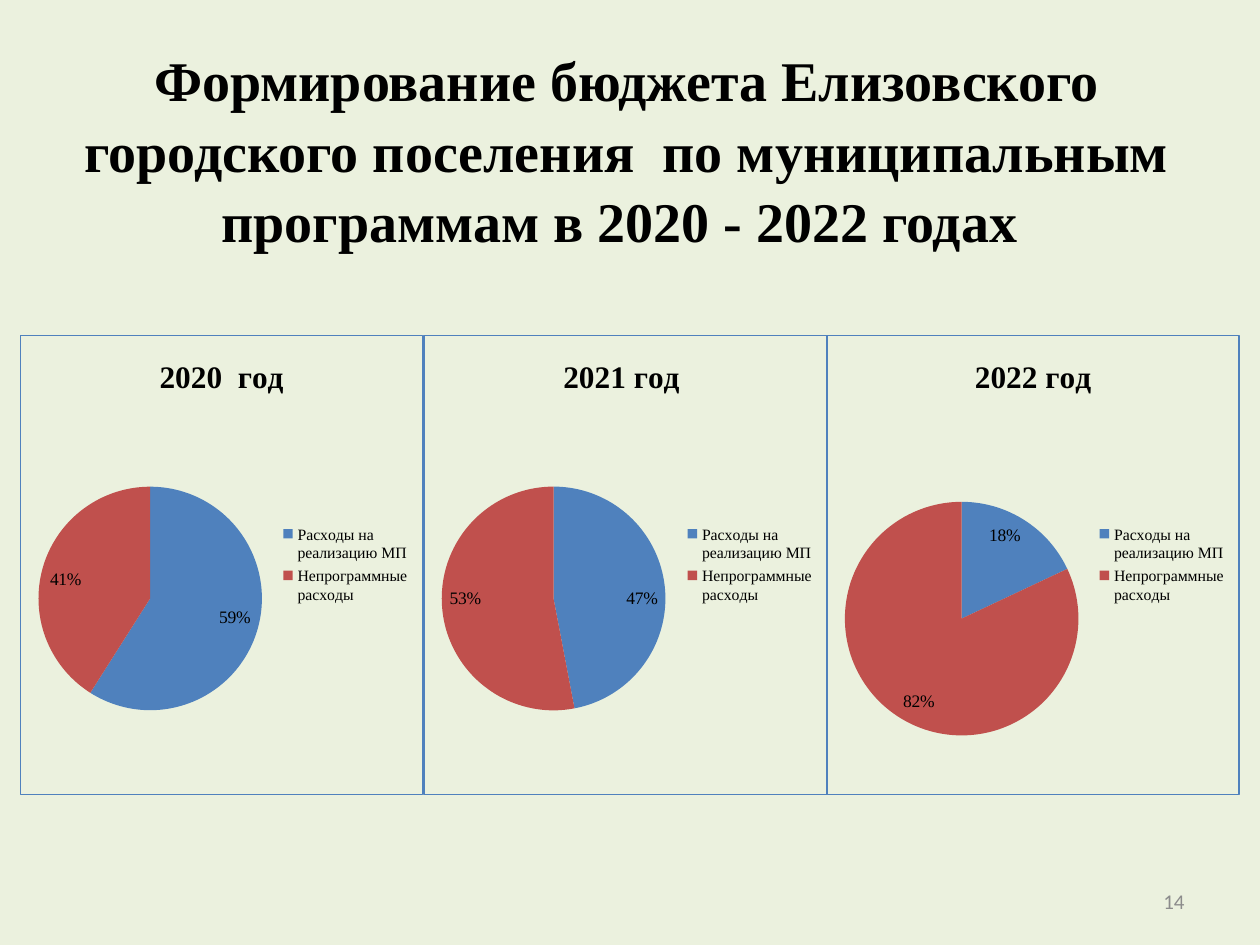
from lxml import etree
from pptx import Presentation
from pptx.chart.data import CategoryChartData
from pptx.dml.color import RGBColor
from pptx.enum.chart import XL_CHART_TYPE, XL_LABEL_POSITION, XL_LEGEND_POSITION
from pptx.enum.text import MSO_ANCHOR, PP_ALIGN
from pptx.oxml import parse_xml
from pptx.oxml.ns import nsdecls, qn
from pptx.util import Inches, Pt

BACKGROUND = RGBColor(0xEB, 0xF1, 0xDE)
BLACK = RGBColor(0, 0, 0)
GREY = RGBColor(0x8C, 0x8C, 0x8C)
BLUE = RGBColor(0x4F, 0x81, 0xBD)
RED = RGBColor(0xC0, 0x50, 0x4D)
SERIF = "Times New Roman"

CATEGORIES = ["Расходы на реализацию МП", "Непрограммные расходы"]
CHART_TOP, CHART_HEIGHT = 2.66, 3.65
# title, percentages, left, width, pie top within chart, pie diameter
YEARS = [
    ("2020  год", (59, 41), 0.16, 3.2, 1.2, 1.78),
    ("2021 год ", (47, 53), 3.36, 3.21, 1.2, 1.78),
    ("2022 год", (18, 82), 6.56, 3.28, 1.32, 1.86),
]
PIE_LEFT = 0.14


def style_font(font, size, color=BLACK, name=SERIF, bold=False):
    font.size, font.name, font.bold = Pt(size), name, bold
    font.color.rgb = color


def add_text(s, text, box, align, size, spacing=1.0, **style):
    tf = s.shapes.add_textbox(*map(Inches, box)).text_frame
    tf.word_wrap = True
    tf.vertical_anchor = MSO_ANCHOR.MIDDLE
    p = tf.paragraphs[0]
    p.text = text
    p.alignment = align
    p.line_spacing = spacing
    style_font(p.font, size, **style)


def add_border(chart):
    """Outline the chart area, leaving it unfilled."""
    sp_pr = parse_xml(
        f'<c:spPr {nsdecls("c", "a")}><a:noFill/><a:ln w="9525"><a:solidFill>'
        f'<a:srgbClr val="{BLUE}"/></a:solidFill></a:ln></c:spPr>')
    chart.element.find(qn("c:chart")).addnext(sp_pr)


def place_pie(chart, x, y, w, h):
    """Fix the plot area, given as fractions of the chart."""
    plot_area = chart.element.find(qn("c:chart")).find(qn("c:plotArea"))
    for old in plot_area.findall(qn("c:layout")):
        plot_area.remove(old)
    layout = etree.Element(qn("c:layout"))
    manual = etree.SubElement(layout, qn("c:manualLayout"))
    settings = [("layoutTarget", "inner"), ("xMode", "edge"), ("yMode", "edge"),
                ("x", x), ("y", y), ("w", w), ("h", h)]
    for tag, value in settings:
        etree.SubElement(manual, qn(f"c:{tag}")).set("val", str(value))
    plot_area.insert(0, layout)


def add_year_pie(s, title, shares, left, width, pie_top, diameter):
    data = CategoryChartData()
    data.categories = CATEGORIES
    data.add_series(title, shares)
    box = map(Inches, (left, CHART_TOP, width, CHART_HEIGHT))
    chart = s.shapes.add_chart(XL_CHART_TYPE.PIE, *box, data).chart
    style_font(chart.font, 10)

    chart.has_title = True
    p = chart.chart_title.text_frame.paragraphs[0]
    p.text = title
    style_font(p.font, 18, bold=True)
    chart.chart_title.include_in_layout = False

    chart.has_legend = True
    chart.legend.position = XL_LEGEND_POSITION.RIGHT
    chart.legend.include_in_layout = False
    style_font(chart.legend.font, 9)

    plot = chart.plots[0]
    plot.vary_by_categories = True
    for i, color in enumerate((BLUE, RED)):
        fill = plot.series[0].points[i].format.fill
        fill.solid()
        fill.fore_color.rgb = color

    plot.has_data_labels = True
    labels = plot.data_labels
    labels.show_percentage = True
    labels.show_value = False
    labels.number_format = "0%"
    labels.number_format_is_linked = False
    labels.position = XL_LABEL_POSITION.INSIDE_END
    style_font(labels.font, 10)

    add_border(chart)
    place_pie(chart, round(PIE_LEFT / width, 3), round(pie_top / CHART_HEIGHT, 3),
              round(diameter / width, 3), round(diameter / CHART_HEIGHT, 3))


def main():
    prs = Presentation()
    prs.slide_width, prs.slide_height = Inches(10), Inches(7.5)
    s = prs.slides.add_slide(prs.slide_layouts[6])
    s.background.fill.solid()
    s.background.fill.fore_color.rgb = BACKGROUND

    add_text(s, "Формирование бюджета Елизовского городского поселения  по "
             "муниципальным программам в 2020 - 2022 годах ",
             (0.31, 0.16, 9.33, 2.03), PP_ALIGN.CENTER, 32, spacing=1.05, bold=True)
    for year in YEARS:
        add_year_pie(s, *year)
    add_text(s, "14", (7.17, 6.95, 2.33, 0.4), PP_ALIGN.RIGHT, 12,
             color=GREY, name="Calibri")
    prs.save("out.pptx")


if __name__ == "__main__":
    main()
